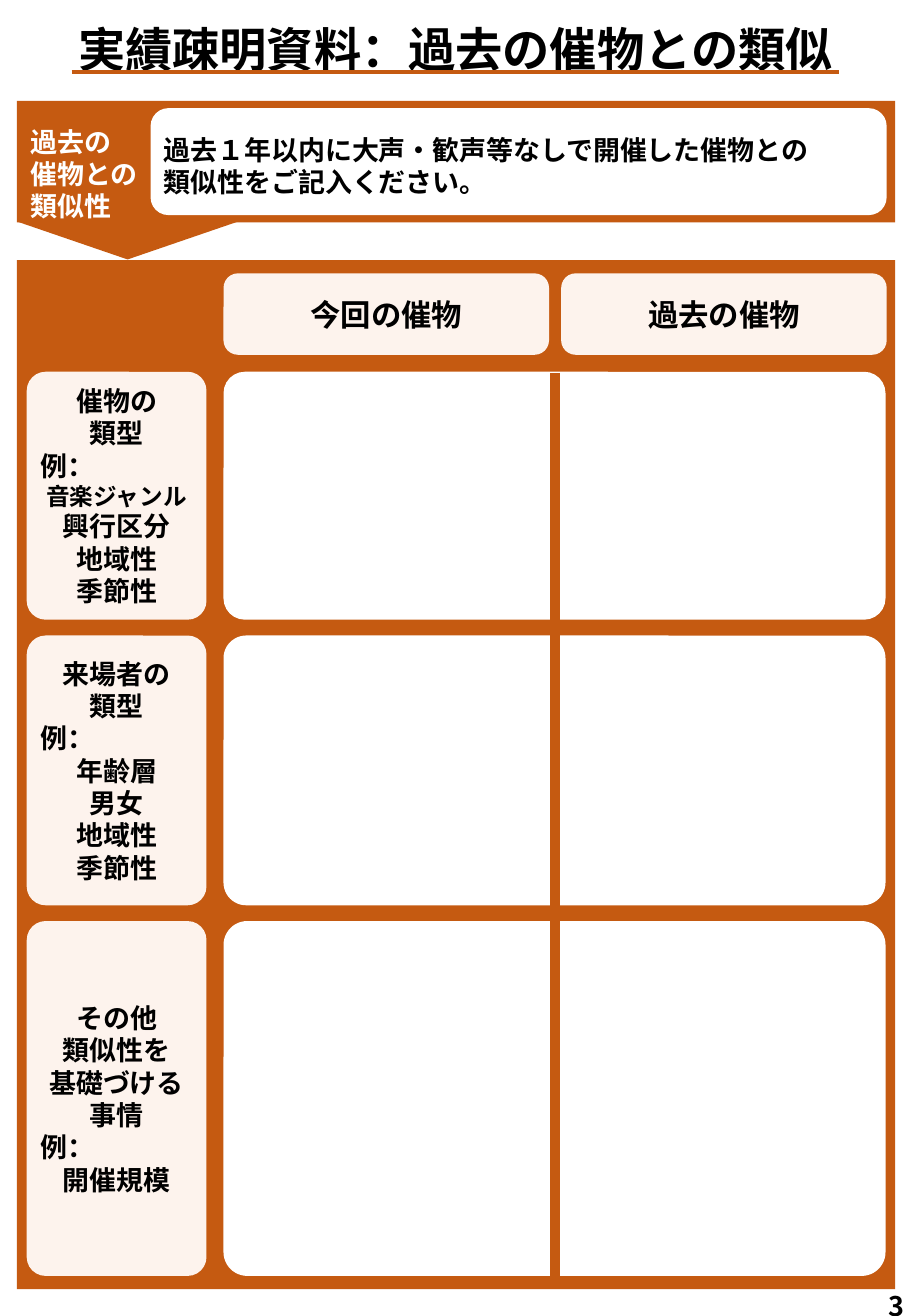
from lxml import etree
from pptx import Presentation, util as u
from pptx.dml.color import RGBColor
from pptx.enum import shapes, text
from pptx.oxml import ns

COLORS = {"orange": "C55A11", "cream": "FDF3ED", "white": "FFFFFF", "black": "000000"}
FONT = "Noto Sans CJK JP"
KIND = shapes.MSO_SHAPE

# Each row: top, height, label corner, answer corner, label lines
ROWS = [
    (3.06, 2.04, 0.086,
     ["催物の", "類型", "例：", "音楽ジャンル", "興行区分", "地域性", "季節性"]),
    (5.23, 2.22, 0.084,
     ["来場者の", "類型", "例：", "年齢層", "男女", "地域性", "季節性"]),
    (7.58, 2.92, 0.067,
     ["その他", "類似性を", "基礎づける事情", "例：", "開催規模"]),
]
LINE_SIZES = {"音楽ジャンル": 14}


def color(name):
    return RGBColor.from_string(COLORS[name])


def write(holder, lines, size=16, fill="black", center=False, middle=False,
          insets=(0.1, 0.05, 0.1, 0.05)):
    """Fill a shape or text box with one paragraph per line."""
    frame = holder.text_frame
    frame.word_wrap = True
    frame.vertical_anchor = text.MSO_ANCHOR.MIDDLE if middle else text.MSO_ANCHOR.TOP
    (frame.margin_left, frame.margin_top,
     frame.margin_right, frame.margin_bottom) = map(u.Inches, insets)
    for i, line in enumerate(lines):
        para = frame.paragraphs[0] if i == 0 else frame.add_paragraph()
        line_size = LINE_SIZES.get(line, size)
        centered = center and line != "例："
        para.alignment = text.PP_ALIGN.CENTER if centered else text.PP_ALIGN.LEFT
        para.line_spacing = u.Pt(line_size * 1.2)
        run = para.add_run()
        run.text = line
        run.font.size = u.Pt(line_size)
        run.font.bold = True
        run.font.color.rgb = color(fill)
        run.font.name = FONT
        east_asian = etree.SubElement(run._r.get_or_add_rPr(), ns.qn("a:ea"))
        east_asian.set("typeface", FONT)


def add_text(slide, box, lines, **style):
    write(slide.shapes.add_textbox(*map(u.Inches, box)), lines, **style)


def add_panel(slide, box, fill, kind=KIND.RECTANGLE, corner=None):
    panel = slide.shapes.add_shape(kind, *map(u.Inches, box))
    panel.shadow.inherit = False
    panel.fill.solid()
    panel.fill.fore_color.rgb = color(fill)
    panel.line.fill.background()
    if corner is not None:
        panel.adjustments[0] = corner
    return panel


def add_label(slide, box, lines, size, corner):
    label = add_panel(slide, box, "cream", KIND.ROUNDED_RECTANGLE, corner)
    write(label, lines, size=size, center=True, middle=True,
          insets=(0.07, 0.04, 0.07, 0.04))


def add_rule(slide, start, end, width):
    rule = slide.shapes.add_connector(
        shapes.MSO_CONNECTOR.STRAIGHT, *map(u.Inches, (*start, *end)))
    rule.line.color.rgb = color("orange")
    rule.line.width = u.Pt(width)
    etree.SubElement(rule._element.spPr, ns.qn("a:effectLst"))


def build_banner(slide, left, top, width, height):
    # Downward pointer, turned a quarter about its centre
    pointer = add_panel(slide, (left + 0.6, top + 0.09, 0.62, 1.81), "orange", KIND.PENTAGON)
    pointer.rotation = 90
    add_panel(slide, (left, top, width, height), "orange")
    add_panel(slide, (left + 1.1, top + 0.06, 6.06, 0.88), "white", KIND.ROUNDED_RECTANGLE)
    add_text(slide, (left - 0.04, top + 0.09, 1.19, 0.96),
             ["過去の", "催物との", "類似性"], fill="white", insets=(0.15, 0.11, 0, 0.05))
    add_text(slide, (left + 1.11, top + 0.22, 6.12, 0.64),
             ["過去１年以内に大声・歓声等なしで開催した催物との", "類似性をご記入ください。"])


def build_title(slide, left, top, width, height):
    add_text(slide, (left, top, width, height),
             ["実績疎明資料：過去の催物との類似"], size=28, center=True)
    add_rule(slide, (left + 0.11, top + 0.47), (left + width - 0.11, top + 0.47), 2.25)


def build_form(slide, left, top, width, height):
    add_panel(slide, (left, top, width, height), "orange")
    answer_left = left + 1.7
    # Column headings
    for column, heading in enumerate(["今回の催物", "過去の催物"]):
        add_label(slide, (answer_left + column * 2.78, top + 0.11, 2.68, 0.67),
                  [heading], 18, 0.178)
    # Labels and answer areas
    for row_top, row_height, corner, lines in ROWS:
        add_label(slide, (left + 0.08, row_top, 1.48, row_height), lines, 16, 0.105)
        add_panel(slide, (answer_left, row_top, 5.45, row_height), "white",
                  KIND.ROUNDED_RECTANGLE, corner)
    # Divider between the two events
    divider = left + 4.43
    add_rule(slide, (divider, top + 0.93), (divider, top + 8.36), 6)


def main():
    deck = Presentation()
    deck.slide_width, deck.slide_height = u.Inches(7.5), u.Inches(10.83)
    slide = deck.slides.add_slide(deck.slide_layouts[6])
    build_banner(slide, 0.14, 0.83, 7.23, 1)
    build_form(slide, 0.14, 2.14, 7.23, 8.47)
    build_title(slide, 0.48, 0.12, 6.54, 0.57)
    # Page number
    add_text(slide, (7.22, 10.56, 0.28, 0.27), ["3"], insets=(0.1, 0.05, 0, 0))
    deck.save("out.pptx")


if __name__ == "__main__":
    main()
